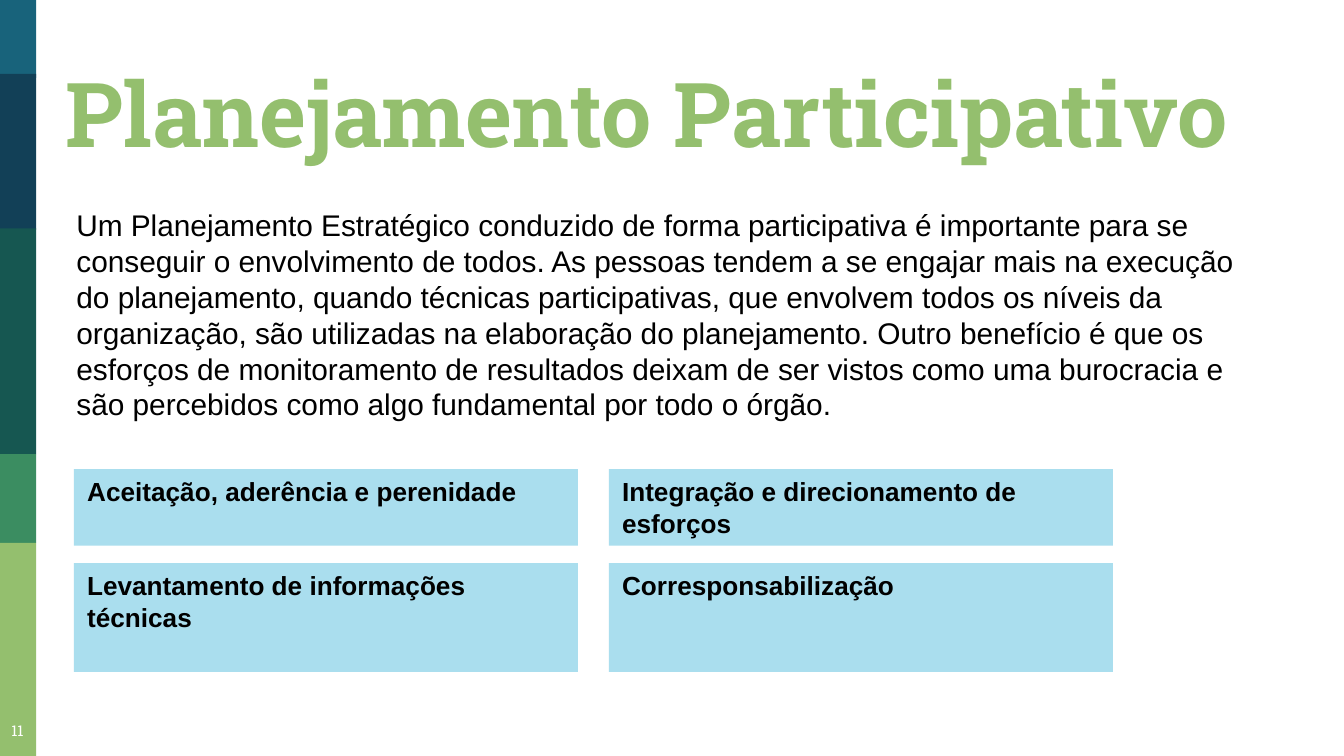
from pptx import Presentation
from pptx.dml.color import RGBColor
from pptx.enum.shapes import MSO_SHAPE
from pptx.enum.text import MSO_ANCHOR, MSO_AUTO_SIZE, PP_ALIGN
from pptx.util import Inches, Pt

RECTANGLE = MSO_SHAPE.RECTANGLE
TOP, BOTTOM = MSO_ANCHOR.TOP, MSO_ANCHOR.BOTTOM
LEFT, CENTER = PP_ALIGN.LEFT, PP_ALIGN.CENTER
NO_AUTOFIT = MSO_AUTO_SIZE.NONE

# Content
TITLE = "Planejamento Participativo"
INTRO = (
    "Um Planejamento Estratégico conduzido de forma participativa é importante "
    "para se conseguir o envolvimento de todos. As pessoas tendem a se engajar "
    "mais na execução do planejamento, quando técnicas participativas, que "
    "envolvem todos os níveis da organização, são utilizadas na elaboração do "
    "planejamento. Outro benefício é que os esforços de monitoramento de "
    "resultados deixam de ser vistos como uma burocracia e são percebidos como "
    "algo fundamental por todo o órgão."
)
BENEFITS = [
    ["Aceitação, aderência e perenidade", "Integração e direcionamento de esforços"],
    ["Levantamento de informações técnicas", "Corresponsabilização"],
]
PAGE_NUMBER = "11"

COLORS = {
    "blue": "18637B", "navy": "124057", "teal": "165751", "green": "3B8D61",
    "lime": "94BF6E", "sky": "AADEEE", "black": "000000", "white": "FFFFFF",
}
BODY_FONT, TITLE_FONT = "Arial", "Roboto Slab"

# Layout, in inches; the slide is 16:9
SLIDE_W = 10
SLIDE_H = SLIDE_W * 9 / 16
BAND_W = 0.27
BANDS = [  # color, top, height
    ("blue", 0, 0.58), ("navy", 0.55, 1.16), ("teal", 1.7, 1.68),
    ("green", 3.38, 0.66), ("lime", 4.04, 1.59),
]
BENEFIT_LEFT, BENEFIT_TOP = 0.55, 3.49
BENEFIT_W, ROW_HEIGHTS = 3.75, [0.57, 0.81]
COLUMN_GAP, ROW_GAP = 0.23, 0.13


def write(shape, text, *, size, font=BODY_FONT, color="black", bold=False,
          align=LEFT, anchor=TOP, inset=(0.1, 0.05)):
    frame = shape.text_frame
    frame.word_wrap = True
    frame.auto_size = NO_AUTOFIT
    frame.vertical_anchor = anchor
    frame.margin_left = frame.margin_right = Inches(inset[0])
    frame.margin_top = frame.margin_bottom = Inches(inset[1])
    paragraph = frame.paragraphs[0]
    paragraph.alignment = align
    run = paragraph.add_run()
    run.text = text
    run.font.name = font
    run.font.size = Pt(size)
    run.font.bold = bold
    run.font.color.rgb = RGBColor.from_string(COLORS[color])


def add_block(slide, left, top, width, height, color):
    block = slide.shapes.add_shape(
        RECTANGLE, Inches(left), Inches(top), Inches(width), Inches(height))
    block.shadow.inherit = False
    block.fill.solid()
    block.fill.fore_color.rgb = RGBColor.from_string(COLORS[color])
    block.line.fill.background()
    return block


def add_label(slide, left, top, width, height):
    return slide.shapes.add_textbox(
        Inches(left), Inches(top), Inches(width), Inches(height))


def main():
    deck = Presentation()
    deck.slide_width, deck.slide_height = Inches(SLIDE_W), Inches(SLIDE_H)
    slide = deck.slides.add_slide(deck.slide_layouts[5])

    # Side bands
    for color, top, height in BANDS:
        add_block(slide, 0, top, BAND_W, height, color)

    # Page number
    write(add_label(slide, -0.06, 5.27, 0.38, 0.35), PAGE_NUMBER, size=8,
          font=TITLE_FONT, color="white", align=CENTER, inset=(0.1, 0.1))

    # Title
    title = slide.shapes.title
    title.left, title.top = Inches(0.39), Inches(0.06)
    title.width, title.height = Inches(9.38), Inches(1.27)
    write(title, TITLE, size=48, font=TITLE_FONT, color="lime", bold=True,
          anchor=BOTTOM, inset=(0.1, 0.1))

    # Introduction
    write(add_label(slide, 0.47, 1.49, 9.11, 1.72), INTRO, size=16)

    # Grid of benefits
    top = BENEFIT_TOP
    for row, height in zip(BENEFITS, ROW_HEIGHTS):
        for column, benefit in enumerate(row):
            left = BENEFIT_LEFT + column * (BENEFIT_W + COLUMN_GAP)
            block = add_block(slide, left, top, BENEFIT_W, height, "sky")
            write(block, benefit, size=14, bold=True)
        top += height + ROW_GAP

    deck.save("out.pptx")


if __name__ == "__main__":
    main()
